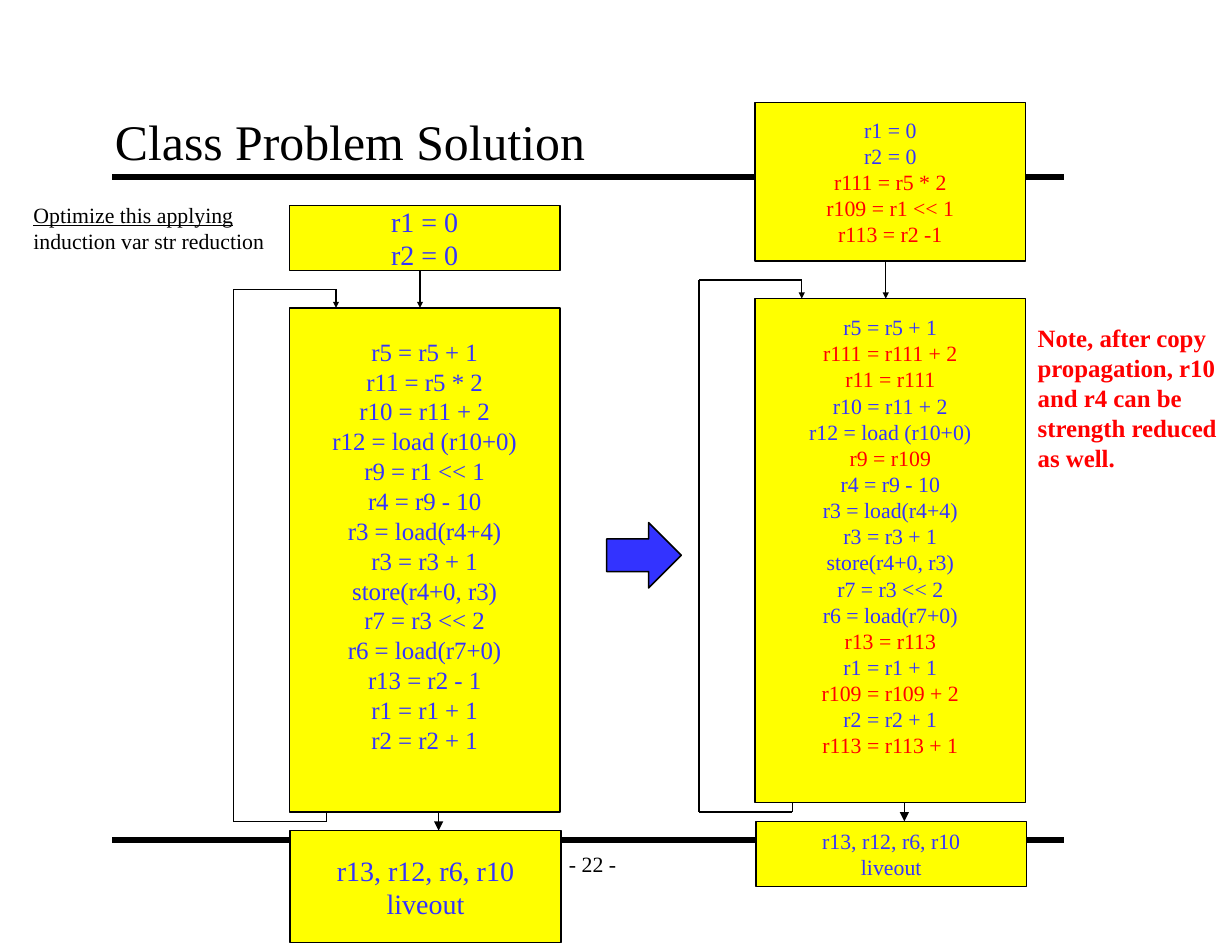
import dataclasses
import itertools

import pptx
import pptx.dml.color
import pptx.enum.shapes
import pptx.enum.text
import pptx.oxml
import pptx.oxml.ns
import pptx.util

SHAPE = pptx.enum.shapes.MSO_SHAPE
ALIGN = pptx.enum.text.PP_ALIGN
ANCHOR = pptx.enum.text.MSO_ANCHOR
FIT = pptx.enum.text.MSO_AUTO_SIZE

# All lengths are grid steps, twelve to the inch.
STEP = pptx.util.Inches(1) / 12
COLS, ROWS = 132, 102

# Areas on the slide: left, top, width, height.
AREA = {
    "title": (11, 11, 102, 8),
    "page": (59, 90, 9, 5),
    "task": (2.4, 21, 27.4, 6.8),
    "arrow": (65, 56, 8, 7),
    "note": (110, 34, 22.3, 17.4),
}
RULE_ROWS = (19, 90)
RULE_ENDS = (12, 114)

# Flow chart parts, measured from the top left corner of the loop body.
WIDE, TALL = 29, 54
GAP = 2            # rows from the body to the exit block
RISE = 4           # rows from the entry block to the body
ENTRY, LEAVE = 14, 16          # columns of the edges in and out
BACK = [(4, TALL), (4, TALL + 1), (-6, TALL + 1), (-6, -2), (5, -2), (5, 0)]


@dataclasses.dataclass(frozen=True)
class Theme:
    font: str = "Times New Roman"
    ink: str = "000000"
    code: str = "3333FF"
    new: str = "FF0000"
    box: str = "FFFF00"
    title: int = 32
    large: int = 18
    body: int = 16
    small: int = 14
    thin: int = 1
    thick: int = 4


THEME = Theme()


@dataclasses.dataclass(frozen=True)
class Flow:
    left: float
    top: float
    size: int
    ends: int          # type size of the entry and exit blocks
    entry_tall: float
    exit_tall: float
    entry: list
    body: list


# A leading star marks a line that the optimization adds or changes.
BEFORE = Flow(
    left=31, top=33, size=THEME.body, ends=THEME.large,
    entry_tall=7, exit_tall=12,
    entry=["r1 = 0", "r2 = 0"],
    body=["r5 = r5 + 1", "r11 = r5 * 2", "r10 = r11 + 2",
          "r12 = load (r10+0)", "r9 = r1 << 1", "r4 = r9 - 10",
          "r3 = load(r4+4)", "r3 = r3 + 1", "store(r4+0, r3)",
          "r7 = r3 << 2", "r6 = load(r7+0)", "r13 = r2 - 1",
          "r1 = r1 + 1", "r2 = r2 + 1"])
AFTER = Flow(
    left=80.9, top=32, size=THEME.small, ends=THEME.small,
    entry_tall=17, exit_tall=7,
    entry=["r1 = 0", "r2 = 0", "*r111 = r5 * 2", "*r109 = r1 << 1",
           "*r113 = r2 -1"],
    body=["r5 = r5 + 1", "*r111 = r111 + 2", "*r11 = r111",
          "r10 = r11 + 2", "r12 = load (r10+0)", "*r9 = r109",
          "r4 = r9 - 10", "r3 = load(r4+4)", "r3 = r3 + 1",
          "store(r4+0, r3)", "r7 = r3 << 2", "r6 = load(r7+0)",
          "*r13 = r113", "r1 = r1 + 1", "*r109 = r109 + 2",
          "r2 = r2 + 1", "*r113 = r113 + 1"])


def grid(*steps):
    return [pptx.util.Emu(round(step * STEP)) for step in steps]


def tint(name):
    return pptx.dml.color.RGBColor.from_string(name)


def put(item, **values):
    for name, value in values.items():
        setattr(item, name, value)


def write(frame, lines, size, hue=THEME.ink, align=ALIGN.LEFT, **style):
    for i, line in enumerate(lines):
        para = frame.paragraphs[0] if i == 0 else frame.add_paragraph()
        put(para, text=line.lstrip("*"), alignment=align)
        shade = THEME.new if line.startswith("*") else hue
        for run in para.runs:
            put(run.font, name=THEME.font, size=pptx.util.Pt(size), **style)
            run.font.color.rgb = tint(shade)


def label(slide, area, lines, size, **style):
    frame = slide.shapes.add_textbox(*grid(*area)).text_frame
    frame.word_wrap = False
    write(frame, lines, size, **style)
    return frame


def stroke(line, width):
    line.color.rgb = tint(THEME.ink)
    line.width = pptx.util.Pt(width)


def solid(slide, kind, area, fill):
    shape = slide.shapes.add_shape(kind, *grid(*area))
    shape.shadow.inherit = False
    shape.fill.solid()
    shape.fill.fore_color.rgb = tint(fill)
    stroke(shape.line, THEME.thin)
    return shape


def block(slide, area, lines, size, foot=0.05):
    frame = solid(slide, SHAPE.RECTANGLE, area, THEME.box).text_frame
    put(frame, word_wrap=False, vertical_anchor=ANCHOR.MIDDLE,
        margin_bottom=pptx.util.Inches(foot))
    write(frame, lines, size, THEME.code, ALIGN.CENTER)


def node(tag, extra=""):
    space = pptx.oxml.ns.nsdecls("a")
    return pptx.oxml.parse_xml(f"<a:{tag} {space} {extra}/>")


def rule(slide, start, end, width=THEME.thin, head=None):
    """Draw a straight line; head is the arrowhead size, sm or med."""
    line = slide.shapes.add_connector(
        pptx.enum.shapes.MSO_CONNECTOR.STRAIGHT, *grid(*start, *end))
    stroke(line.line, width)
    props = line._element.spPr
    if head:
        props.find(pptx.oxml.ns.qn("a:ln")).append(
            node("tailEnd", f'type="triangle" w="{head}" len="{head}"'))
    props.append(node("effectLst"))


def chart(slide, flow):
    """Draw entry, loop body and exit blocks with the edges between them."""
    left, top = flow.left, flow.top
    block(slide, (left, top, WIDE, TALL), flow.body, flow.size, foot=0.31)
    block(slide, (left, top - RISE - flow.entry_tall, WIDE, flow.entry_tall),
          flow.entry, flow.ends)
    block(slide, (left + 0.1, top + TALL + GAP, WIDE, flow.exit_tall),
          ["r13, r12, r6, r10", "liveout"], flow.ends)

    rule(slide, (left + ENTRY, top - RISE), (left + ENTRY, top), head="sm")
    rule(slide, (left + LEAVE, top + TALL),
         (left + LEAVE, top + TALL + GAP), head="med")
    loop = [(left + x, top + y) for x, y in BACK]
    for start, end in itertools.pairwise(loop):
        rule(slide, start, end, head="sm" if end == loop[-1] else None)


def head(slide, text):
    title = slide.shapes.title
    names = ("left", "top", "width", "height")
    put(title, **dict(zip(names, grid(*AREA["title"]))))
    side, edge = pptx.util.Inches(0.11), pptx.util.Inches(0.06)
    put(title.text_frame, auto_size=FIT.NONE, vertical_anchor=ANCHOR.BOTTOM,
        margin_left=side, margin_right=side,
        margin_top=edge, margin_bottom=edge)
    write(title.text_frame, [text], THEME.title)


def main():
    deck = pptx.Presentation()
    deck.slide_width, deck.slide_height = grid(COLS, ROWS)
    slide = deck.slides.add_slide(deck.slide_layouts[5])
    head(slide, "Class Problem Solution")
    for row in RULE_ROWS:
        rule(slide, *[(col, row) for col in RULE_ENDS], THEME.thick)
    page = label(slide, AREA["page"], ["- 22 -"], THEME.small,
                 align=ALIGN.CENTER)
    page.vertical_anchor = ANCHOR.MIDDLE
    task = label(slide, AREA["task"],
                 ["Optimize this applying", "induction var str reduction"],
                 THEME.small)
    task.paragraphs[0].runs[0].font.underline = True
    chart(slide, BEFORE)
    solid(slide, SHAPE.RIGHT_ARROW, AREA["arrow"], THEME.code)
    chart(slide, AFTER)
    label(slide, AREA["note"],
          ["Note, after copy\vpropagation, r10\vand r4 can be\v"
           "strength reduced\vas well."],
          THEME.body, hue=THEME.new, bold=True)
    deck.save("out.pptx")


if __name__ == "__main__":
    main()
